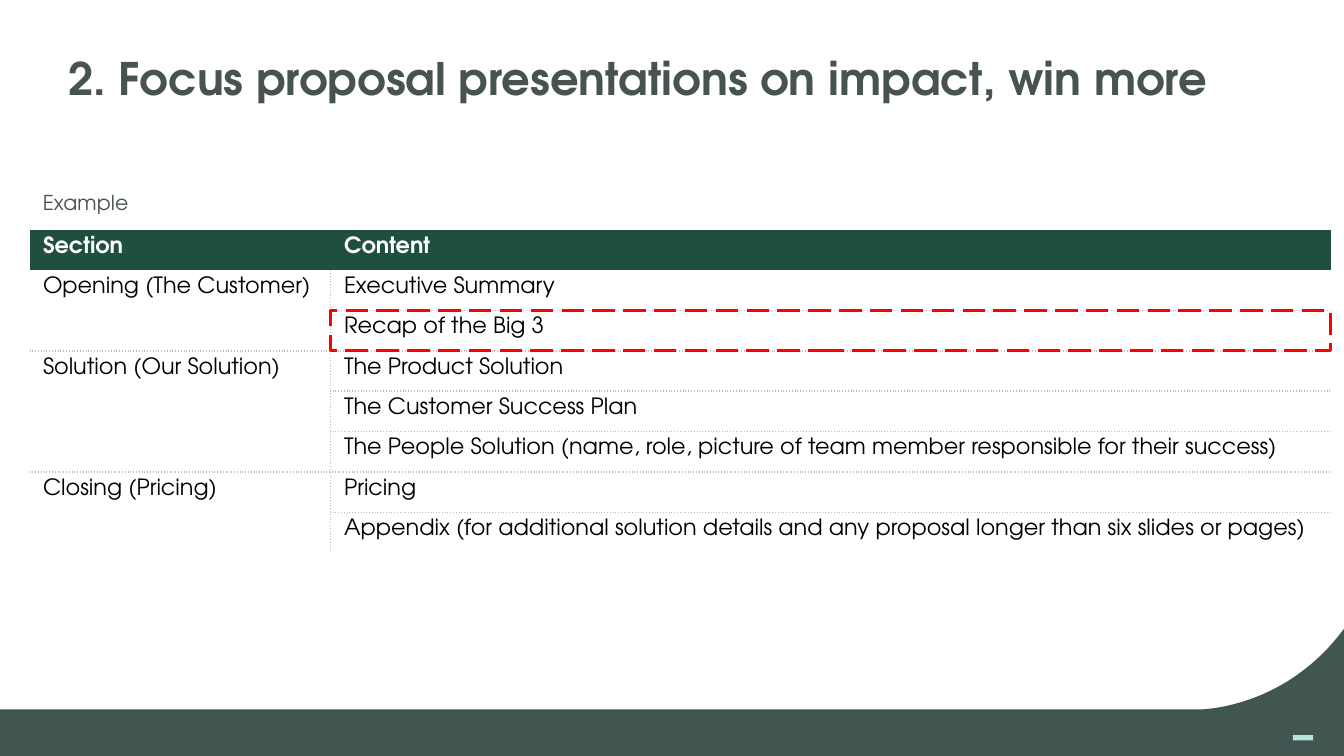
from lxml.etree import SubElement
from pptx import Presentation
from pptx.dml.color import RGBColor
from pptx.enum.dml import MSO_LINE
from pptx.enum.shapes import MSO_SHAPE
from pptx.enum.text import MSO_ANCHOR, MSO_AUTO_SIZE, PP_ALIGN
from pptx.oxml.ns import qn
from pptx.util import Inches, Pt

FONT = "TeX Gyre Adventor"
WIDTH = 10
HEIGHT = WIDTH * 9 / 16
COLORS = {
    "band": "415651", "mint": "B5E5DC", "heading": "47534F", "header": "204F40",
    "white": "FFFFFF", "black": "000000", "rule": "BFBFBF", "highlight": "FF0000",
}
NO_STYLE = "{2D5ABB26-0587-4C30-8999-92F81FD0307C}"
LEFT, TOP = 0.22, 1.71
COLUMNS, ROW = (2.24, 7.44), 0.3
SECTIONS = {
    "Opening (The Customer)": ["Executive Summary", "Recap of the Big 3"],
    "Solution (Our Solution)": [
        "The Product Solution",
        "The Customer Success Plan",
        "The People Solution (name, role, picture of team member responsible for their success)",
    ],
    "Closing (Pricing)": [
        "Pricing",
        "Appendix (for additional solution details and any proposal longer than six slides or pages)",
    ],
}


def color(name):
    """Return the named colour."""
    return RGBColor.from_string(COLORS[name])


def box(left, top, width, height):
    """Return a position and size given in inches."""
    return [Inches(value) for value in (left, top, width, height)]


def write(text_frame, text, size, color_name, bold=False):
    """Set one formatted paragraph and return it."""
    text_frame.text = text
    paragraph = text_frame.paragraphs[0]
    font = paragraph.runs[0].font
    font.name, font.size, font.bold = FONT, Pt(size), bold
    font.color.rgb = color(color_name)
    return paragraph


def paint(shape, color_name):
    """Give a shape a plain fill without outline or shadow."""
    shape.shadow.inherit = False
    shape.fill.solid()
    shape.fill.fore_color.rgb = color(color_name)
    shape.line.fill.background()


def add_footer(slide):
    """Draw the footer band that sweeps up on the right, with its mark."""
    band_top, curve_left, curve_top = 5.28, 8.91, 4.68
    bend_x, bend_y = 9.55, 5.29
    points = [(0, HEIGHT), (0, band_top)]
    for step in range(25):
        t = step / 24
        start, bend, end = (1 - t) ** 3 + 3 * t * (1 - t) ** 2, 3 * t * t * (1 - t), t ** 3
        points.append((start * curve_left + bend * bend_x + end * WIDTH,
                       start * band_top + bend * bend_y + end * curve_top))
    points = [(Inches(x), Inches(y)) for x, y in points]
    builder = slide.shapes.build_freeform(Inches(WIDTH), Inches(HEIGHT))
    builder.add_line_segments(points, close=True)
    paint(builder.convert_to_shape(), "band")
    paint(slide.shapes.add_shape(MSO_SHAPE.RECTANGLE, *box(9.62, 5.47, 0.15, 0.04)), "mint")


def add_title(slide, text):
    """Place and format the title placeholder."""
    title = slide.shapes.title
    title.left, title.top, title.width, title.height = box(0.46, 0.37, 9.08, 0.43)
    frame = title.text_frame
    frame.auto_size = MSO_AUTO_SIZE.NONE
    frame.vertical_anchor = MSO_ANCHOR.BOTTOM
    frame.margin_left = frame.margin_right = Inches(0.05)
    frame.margin_top = frame.margin_bottom = Inches(0.02)
    paragraph = write(frame, text, 24, "heading", True)
    paragraph.alignment, paragraph.line_spacing = PP_ALIGN.LEFT, 0.9


def add_caption(slide, text):
    """Add the caption above the table."""
    frame = slide.shapes.add_textbox(*box(LEFT, 1.32, 9.48, 0.39)).text_frame
    frame.word_wrap = True
    frame.margin_left = frame.margin_right = Inches(0.1)
    frame.margin_top = frame.margin_bottom = Inches(0.1)
    write(frame, text, 11, "heading")


def add_borders(cell, sides):
    """Draw dotted rules on the given sides, in the order L, R, T, B."""
    properties = cell._tc.get_or_add_tcPr()
    for side in sides:
        line = SubElement(properties, qn(f"a:ln{side}"), w=str(Pt(1)))
        fill = SubElement(line, qn("a:solidFill"))
        SubElement(fill, qn("a:srgbClr"), val=COLORS["rule"])
        SubElement(line, qn("a:prstDash"), val="dot")


def add_section_table(slide):
    """Add the table of sections and their contents."""
    count = 1 + sum(map(len, SECTIONS.values()))
    frame = slide.shapes.add_table(count, 2, *box(LEFT, TOP, sum(COLUMNS), count * ROW))
    table = frame.table
    table._tbl.tblPr.find(qn("a:tableStyleId")).text = NO_STYLE
    table.first_row = table.horz_banding = False
    for column, width in zip(table.columns, COLUMNS):
        column.width = Inches(width)
    for row in table.rows:
        row.height = Inches(ROW)
    for cell, text in zip(table.rows[0].cells, ("Section", "Content")):
        write(cell.text_frame, text, 12, "white", True)
        cell.fill.solid()
        cell.fill.fore_color.rgb = color("header")
    first = 1
    for section, contents in SECTIONS.items():
        last = first + len(contents) - 1
        table.cell(first, 0).merge(table.cell(last, 0))
        write(table.cell(first, 0).text_frame, section, 12, "black")
        for row, content in enumerate(contents, first):
            write(table.cell(row, 1).text_frame, content, 12, "black")
            top = "T" if row > 1 else ""
            bottom = "B" if row < count - 1 else ""
            add_borders(table.cell(row, 1), "L" + top + bottom)
        outer_top = "T" if first > 1 else ""
        outer_bottom = "B" if last < count - 1 else ""
        add_borders(table.cell(first, 0), "R" + outer_top + outer_bottom)
        first = last + 1
    for row in range(1, count):
        for column in range(2):
            table.cell(row, column).fill.background()


def add_highlight(slide, row):
    """Frame the content cell of a table row with red dashes."""
    area = box(LEFT + COLUMNS[0], TOP + row * ROW, COLUMNS[1], ROW)
    shape = slide.shapes.add_shape(MSO_SHAPE.RECTANGLE, *area)
    shape.shadow.inherit = False
    shape.fill.background()
    shape.line.color.rgb = color("highlight")
    shape.line.width = Pt(1.5)
    shape.line.dash_style = MSO_LINE.LONG_DASH


def main():
    """Build and save the slide."""
    presentation = Presentation()
    presentation.slide_width, presentation.slide_height = Inches(WIDTH), Inches(HEIGHT)
    slide = presentation.slides.add_slide(presentation.slide_layouts[5])
    add_footer(slide)
    add_title(slide, "2. Focus proposal presentations on impact, win more")
    add_caption(slide, "Example")
    add_section_table(slide)
    add_highlight(slide, 2)
    presentation.save("out.pptx")


if __name__ == "__main__":
    main()
